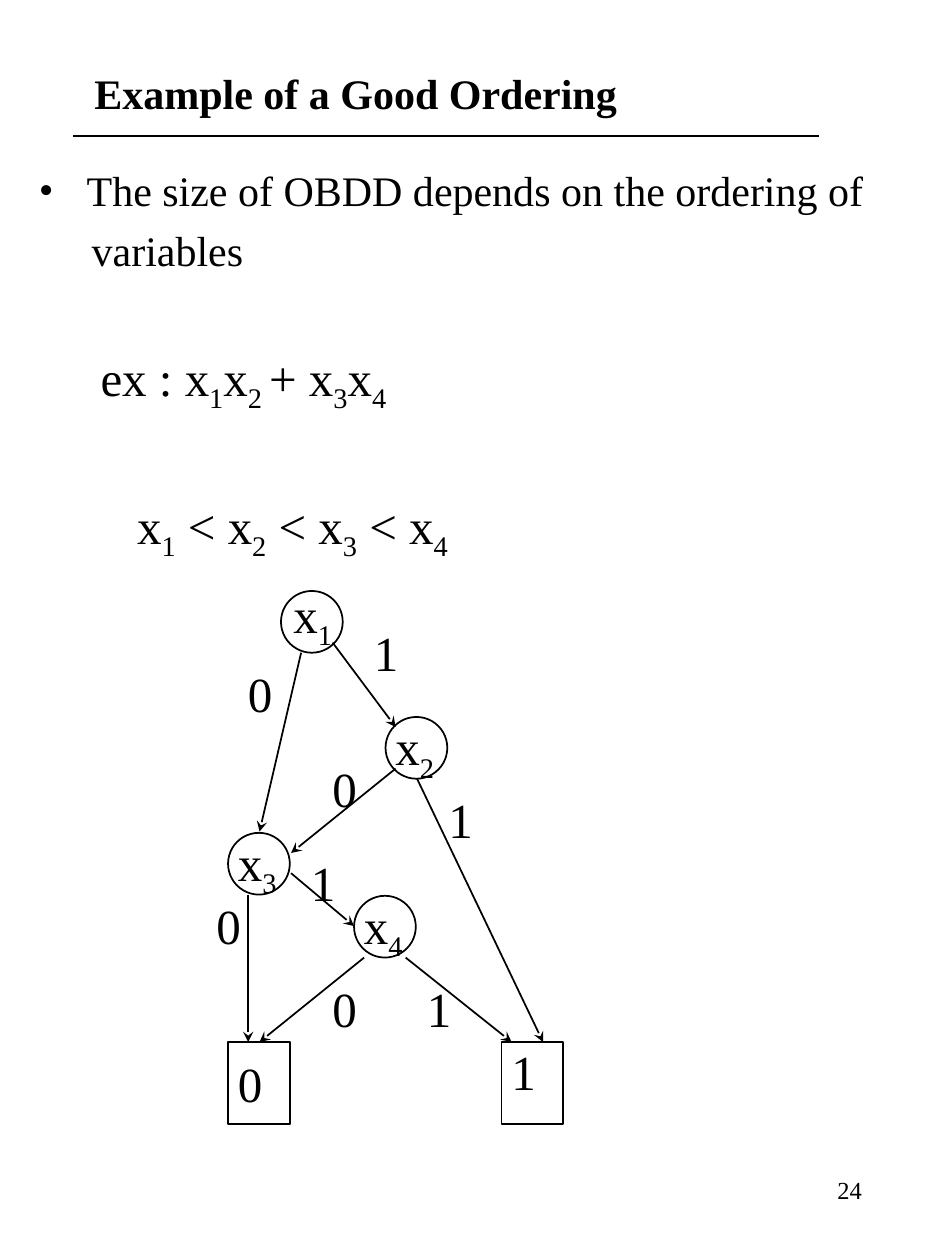
from lxml import etree
from pptx import Presentation
from pptx.dml.color import RGBColor
from pptx.enum.shapes import MSO_CONNECTOR, MSO_SHAPE
from pptx.enum.text import MSO_ANCHOR, MSO_AUTO_SIZE, PP_ALIGN
from pptx.oxml.ns import qn
from pptx.util import Inches, Pt

BLACK = RGBColor(0, 0, 0)
WHITE = RGBColor(255, 255, 255)
FONT = "Times New Roman"


def write(paragraph, text, size, bold=False):
    """Fill a paragraph; every second part between bars is a subscript."""
    for i, part in enumerate(text.split("|")):
        run = paragraph.add_run()
        run.text = part
        if i % 2:
            run.font._element.set("baseline", "-25000")
    font = paragraph.font
    font.name, font.size, font.bold = FONT, Pt(size), bold
    font.color.rgb = BLACK


def draw_line(shapes, start, end, arrow=False):
    x1, y1, x2, y2 = map(Inches, start + end)
    line = shapes.add_connector(MSO_CONNECTOR.STRAIGHT, x1, y1, x2, y2)
    line.line.color.rgb = BLACK
    line.line.width = Pt(1)
    if arrow:
        etree.SubElement(line.line._get_or_add_ln(), qn("a:tailEnd"), type="stealth")
    etree.SubElement(line._element.spPr, qn("a:effectLst"))


prs = Presentation()
prs.slide_width, prs.slide_height = Inches(7.5), Inches(10)
slide = prs.slides.add_slide(prs.slide_layouts[6])

# Title and rule
title = slide.shapes.add_textbox(Inches(0.65), Inches(0.31), Inches(6.18), Inches(0.86)).text_frame
title.word_wrap = True
title.vertical_anchor = MSO_ANCHOR.MIDDLE
write(title.paragraphs[0], "Example of a Good Ordering", 24, bold=True)
draw_line(slide.shapes, (0.58, 1.08), (6.5, 1.08))

# Body: text, size, left margin, space before
body = slide.shapes.add_textbox(Inches(0.21), Inches(1.26), Inches(6.94), Inches(3.62)).text_frame
body.word_wrap = True
body_lines = [
    ("The size of OBDD depends on the ordering of", 24, 0.38, 0),
    ("variables", 24, 0.42, 5.5),
    ("ex : x|1|x|2 |+ x|3|x|4", 28, 0.49, 41),
    ("x|1| < x|2| < x|3| < x|4", 28, 0.78, 46.5),
]
for i, (text, size, margin, before) in enumerate(body_lines):
    paragraph = body.add_paragraph() if i else body.paragraphs[0]
    paragraph.space_before = Pt(before)
    properties = paragraph._p.get_or_add_pPr()
    properties.set("marL", str(Inches(margin)))
    if i == 0:
        properties.set("indent", str(-Inches(margin)))
        etree.SubElement(properties, qn("a:buFont"), typeface=FONT)
        etree.SubElement(properties, qn("a:buChar"), char="•")
    write(paragraph, text, size)

# Decision diagram
diagram = slide.shapes.add_group_shape().shapes
variables = [(2.23, 4.69), (3.06, 5.69), (1.81, 6.61), (2.81, 7.11)]
terminals = [(1.81, 8.27), (3.98, 8.27)]
nodes = [(MSO_SHAPE.OVAL, at, 0.49) for at in variables]
nodes += [(MSO_SHAPE.RECTANGLE, at, 0.65) for at in terminals]
for kind, (x, y), height in nodes:
    node = diagram.add_shape(kind, Inches(x), Inches(y), Inches(0.49), Inches(height))
    node.shadow.inherit = False
    node.fill.solid()
    node.fill.fore_color.rgb = WHITE
    node.line.color.rgb = BLACK
    node.line.width = Pt(1)

edges = [
    ((2.39, 5.18), (2.06, 6.6)),
    ((2.64, 5.1), (3.14, 5.77)),
    ((3.14, 6.1), (2.31, 6.77)),
    ((3.31, 6.18), (4.31, 8.27)),
    ((1.97, 7.1), (1.97, 8.27)),
    ((2.31, 6.93), (2.81, 7.35)),
    ((2.89, 7.6), (2.06, 8.27)),
    ((3.22, 7.6), (4.06, 8.27)),
]
for start, end in edges:
    draw_line(diagram, start, end, arrow=True)

labels = [
    ("x|1", 2.23, 4.59), ("x|2", 3.04, 5.64), ("x|3", 1.79, 6.56), ("x|4", 2.79, 7.06),
    ("0", 1.79, 8.31), ("1", 3.96, 8.22),
    ("0", 1.87, 5.22), ("1", 2.87, 4.89),
    ("0", 2.54, 5.97), ("1", 3.46, 6.22),
    ("0", 1.62, 7.06), ("1", 2.37, 6.72),
    ("0", 2.54, 7.72), ("1", 3.29, 7.72),
]
for text, x, y in labels:
    width = 0.53 if "|" in text else 0.4
    label = diagram.add_textbox(Inches(x), Inches(y), Inches(width), Inches(0.57)).text_frame
    label.word_wrap = False
    label.auto_size = MSO_AUTO_SIZE.SHAPE_TO_FIT_TEXT
    write(label.paragraphs[0], text, 28)

# Page number
page = slide.shapes.add_textbox(Inches(5.38), Inches(9.11), Inches(1.56), Inches(0.67)).text_frame
page.word_wrap = True
page.vertical_anchor = MSO_ANCHOR.MIDDLE
page.paragraphs[0].alignment = PP_ALIGN.RIGHT
write(page.paragraphs[0], "24", 14)

prs.save("out.pptx")
